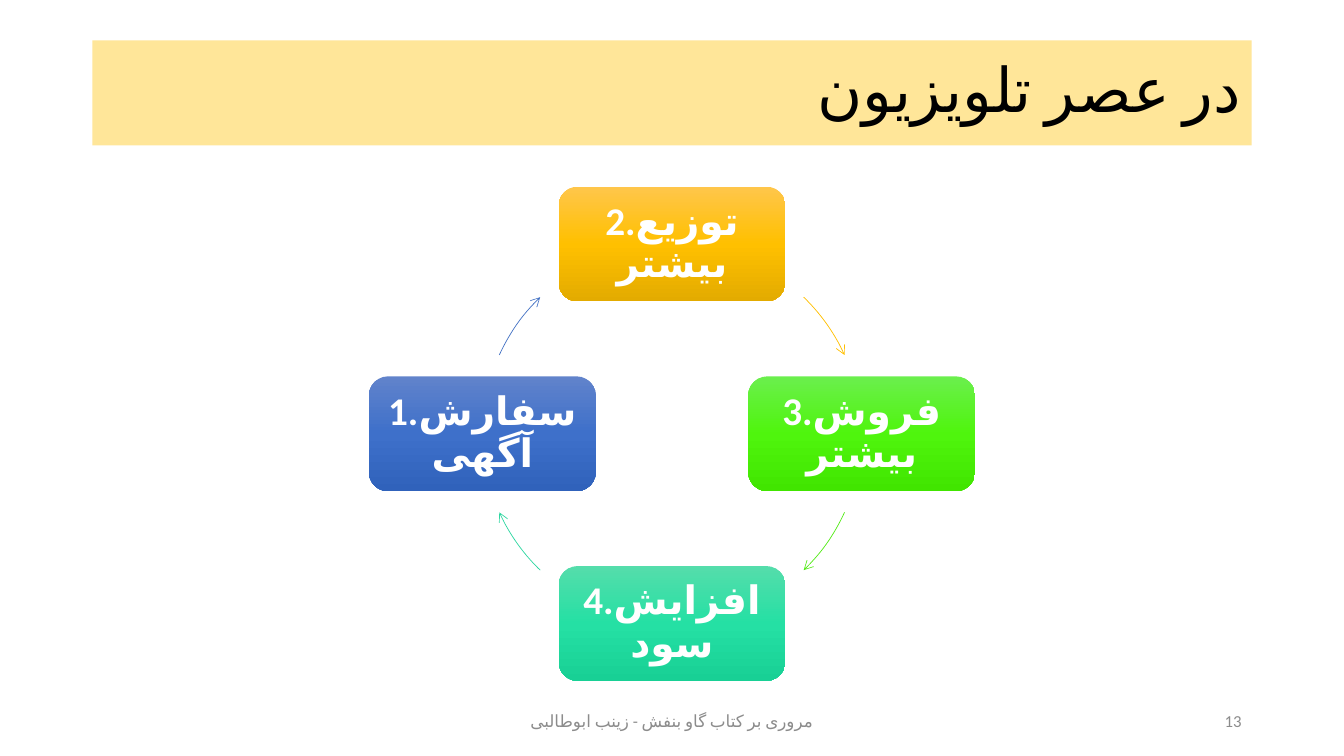
"""Build the slide with the four-step advertising cycle of the television age."""
import copy
import math

import pptx
import pptx.dml.color
import pptx.enum.lang
import pptx.enum.shapes
import pptx.enum.text
import pptx.oxml
import pptx.oxml.ns
import pptx.util

Pt = pptx.util.Pt
ALIGN = pptx.enum.text.PP_ALIGN
SHAPE = pptx.enum.shapes.MSO_SHAPE

FONT = "Calibri"
TITLE = "در عصر تلویزیون"
FOOTER = "مروری بر کتاب گاو بنفش - زینب ابوطالبی"
SLIDE_NUMBER = "13"

# text, direction of the step, gradient, start of the arrow, arrow colour
STEPS = [
    ("2.توزیع بیشتر", 270, ("FFC64B", "FFC000", "E3AB00"), 314, "FFC000"),
    ("3.فروش بیشتر", 0, ("6BEF4D", "4FF50D", "41E500"), 24.5, "53EB17"),
    ("4.افزایش سود", 90, ("55DDAB", "25E0A4", "18D095"), 134, "2ED7A1"),
    ("1.سفارش آگهی", 180, ("6183CB", "3E70CA", "3062BB"), 204.5, "4472C4"),
]
CENTER_X, CENTER_Y, RADIUS = 480, 309.8, 135.5
STEP_WIDTH, STEP_HEIGHT, STEP_INSET = 162, 82, 8.6
ARROW_SWEEP = 21.5


def color(value):
    return pptx.dml.color.RGBColor.from_string(value)


def write(shape, text, size, text_color, align, bold=False, spacing=None):
    frame = shape.text_frame
    frame.word_wrap = True
    frame.auto_size = pptx.enum.text.MSO_AUTO_SIZE.NONE
    frame.vertical_anchor = pptx.enum.text.MSO_ANCHOR.MIDDLE
    frame.text = text
    paragraph = frame.paragraphs[0]
    paragraph.alignment = align
    paragraph.line_spacing = spacing
    paragraph.font.name = FONT
    paragraph.font.size = Pt(size)
    paragraph.font.bold = bold
    paragraph.font.color.rgb = color(text_color)
    run = paragraph.runs[0]
    run.font.language_id = pptx.enum.lang.MSO_LANGUAGE_ID.FARSI
    run.font._element.append(pptx.oxml.parse_xml(
        f'<a:cs {pptx.oxml.ns.nsdecls("a")} typeface="{FONT}"/>'))
    return paragraph


def add_title(slide):
    title = slide.shapes.title
    title.left, title.top, title.width, title.height = Pt(66), Pt(28.8), Pt(828), Pt(75)
    title.fill.solid()
    title.fill.fore_color.rgb = color("FFE699")
    paragraph = write(title, TITLE, 44, "000000", ALIGN.RIGHT, spacing=0.9)
    paragraph._p.get_or_add_pPr().set("rtl", "1")


def add_step(slide, text, direction, gradient):
    angle = math.radians(direction)
    left = CENTER_X + RADIUS * math.cos(angle) - STEP_WIDTH / 2
    top = CENTER_Y + RADIUS * math.sin(angle) - STEP_HEIGHT / 2
    step = slide.shapes.add_shape(
        SHAPE.ROUNDED_RECTANGLE, Pt(left), Pt(top), Pt(STEP_WIDTH), Pt(STEP_HEIGHT))
    step.shadow.inherit = False
    step.line.fill.background()
    step.fill.gradient()
    step.fill.gradient_angle = 270
    stop_list = step._element.spPr.find(".//" + pptx.oxml.ns.qn("a:gsLst"))
    stop_list.append(copy.deepcopy(stop_list[-1]))
    for index, stop in enumerate(step.fill.gradient_stops):
        stop.position = index / 2
        stop.color.rgb = color(gradient[index])
    frame = step.text_frame
    frame.margin_left = frame.margin_right = Pt(STEP_INSET)
    frame.margin_top = frame.margin_bottom = Pt(STEP_INSET)
    write(step, text, 28, "FFFFFF", ALIGN.CENTER, bold=True, spacing=0.9)


def add_arrow(slide, start, line_color):
    arrow = slide.shapes.add_shape(
        SHAPE.ARC, Pt(CENTER_X - RADIUS), Pt(CENTER_Y - RADIUS), Pt(2 * RADIUS), Pt(2 * RADIUS))
    arrow.adjustments[0] = start * 0.6
    arrow.adjustments[1] = (start + ARROW_SWEEP) * 0.6
    arrow.shadow.inherit = False
    arrow.fill.background()
    arrow.line.color.rgb = color(line_color)
    arrow.line.width = Pt(0.5)
    line = arrow._element.spPr.find(pptx.oxml.ns.qn("a:ln"))
    line.append(pptx.oxml.parse_xml(
        f'<a:tailEnd {pptx.oxml.ns.nsdecls("a")} type="arrow"/>'))


def add_footer(slide, text, left, width, align):
    box = slide.shapes.add_textbox(Pt(left), Pt(500.5), Pt(width), Pt(28.8))
    write(box, text, 12, "8C8C8C", align)


def main():
    presentation = pptx.Presentation()
    presentation.slide_width, presentation.slide_height = Pt(960), Pt(540)
    slide = presentation.slides.add_slide(presentation.slide_layouts[5])
    add_title(slide)
    for text, direction, gradient, arrow_start, arrow_color in STEPS:
        add_step(slide, text, direction, gradient)
        add_arrow(slide, arrow_start, arrow_color)
    add_footer(slide, FOOTER, 318, 324, ALIGN.CENTER)
    add_footer(slide, SLIDE_NUMBER, 678, 216, ALIGN.RIGHT)
    presentation.save("out.pptx")


if __name__ == "__main__":
    main()
